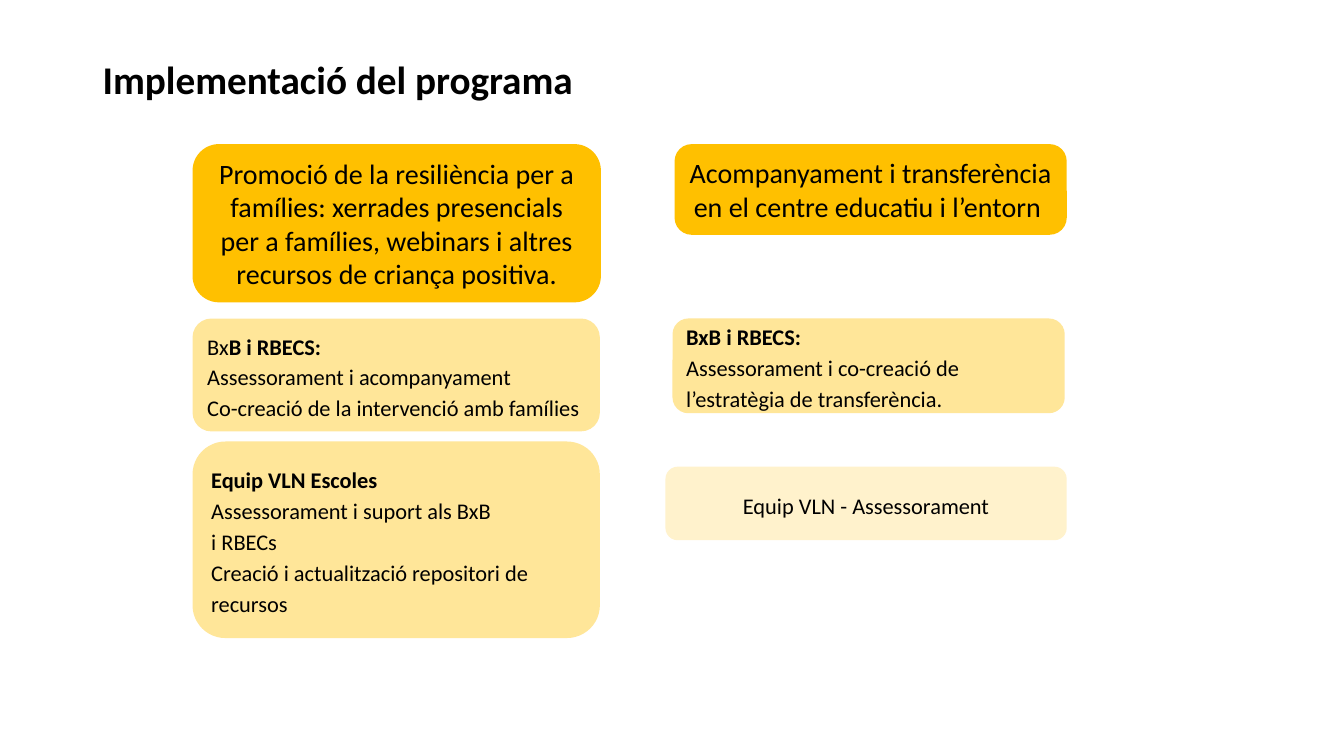
"""Build the slide on how the programme is put into practice."""
from pptx import Presentation
from pptx.dml.color import RGBColor
from pptx.enum.shapes import MSO_SHAPE
from pptx.enum.text import MSO_ANCHOR, PP_ALIGN
from pptx.util import Inches, Pt

COLORS = {"gold": "FFC000", "sand": "FFE699", "cream": "FFF2CC", "ink": "000000"}
FONT = "Calibri"
TITLE = "Implementació del programa"

HEADS = [
    ((1.91, 1.43, 4.05, 1.57), 0.167,
     "Promoció de la resiliència per a famílies: xerrades presencials "
     "per a famílies, webinars i altres recursos de criança positiva."),
    ((6.69, 1.43, 3.89, 0.9), 0.189,
     "Acompanyament i transferència en el centre educatiu i l’entorn "),
]
TASKS = [
    ((1.91, 3.16, 4.04, 1.12), [
        [("Bx", False), ("B i RBECS:", True)],
        [("Assessorament i acompanyament", False)],
        [("Co-creació de la intervenció amb famílies", False)],
    ]),
    ((1.91, 4.38, 4.04, 1.95), [
        [("Equip VLN Escoles", True)],
        [("Assessorament i suport als BxB", False)],
        [("i RBECs", False)],
        [("Creació i actualització repositori de recursos", False)],
    ]),
    ((6.67, 3.16, 3.89, 0.94), [
        [("BxB i RBECS:", True)],
        [("Assessorament i co-creació de l’estratègia de transferència.", False)],
    ]),
]
SUPPORT = ((6.6, 4.63, 3.98, 0.73), "Equip VLN - Assessorament")


def write(shape, lines, size=16, align=PP_ALIGN.LEFT, space=1.15, inset=None):
    """Fill a shape with lines, each a list of (text, bold) runs."""
    frame = shape.text_frame
    frame.word_wrap = True
    frame.vertical_anchor = MSO_ANCHOR.MIDDLE
    if inset is not None:
        frame.margin_left = frame.margin_right = Inches(inset)
        frame.margin_top = frame.margin_bottom = Inches(inset)
    for i, line in enumerate(lines):
        para = frame.add_paragraph() if i else frame.paragraphs[0]
        para.alignment = align
        para.line_spacing = space
        for text, bold in line:
            run = para.add_run()
            run.text = text
            run.font.name = FONT
            run.font.size = Pt(size)
            run.font.bold = bold
            run.font.color.rgb = RGBColor.from_string(COLORS["ink"])


def card(slide, place, color, lines, round=0.167, **style):
    """Add a rounded card with text."""
    box = slide.shapes.add_shape(MSO_SHAPE.ROUNDED_RECTANGLE, *map(Inches, place))
    box.adjustments[0] = round
    box.shadow.inherit = False
    box.fill.solid()
    box.fill.fore_color.rgb = RGBColor.from_string(COLORS[color])
    box.line.fill.background()
    write(box, lines, inset=0.09, **style)


def main():
    """Build and save the slide."""
    deck = Presentation()
    deck.slide_width, deck.slide_height = Inches(13.33), Inches(7.5)
    slide = deck.slides.add_slide(deck.slide_layouts[6])
    title = slide.shapes.add_textbox(*map(Inches, (0.92, 0.4, 11.5, 0.83)))
    write(title, [[(TITLE, True)]], size=28, space=0.9)
    for place, round, text in HEADS:
        card(slide, place, "gold", [[(text, False)]], round=round,
             size=20, align=PP_ALIGN.CENTER, space=1.0)
    for place, lines in TASKS:
        card(slide, place, "sand", lines)
    place, text = SUPPORT
    card(slide, place, "cream", [[(text, False)]], align=PP_ALIGN.CENTER)
    deck.save("out.pptx")


if __name__ == "__main__":
    main()
